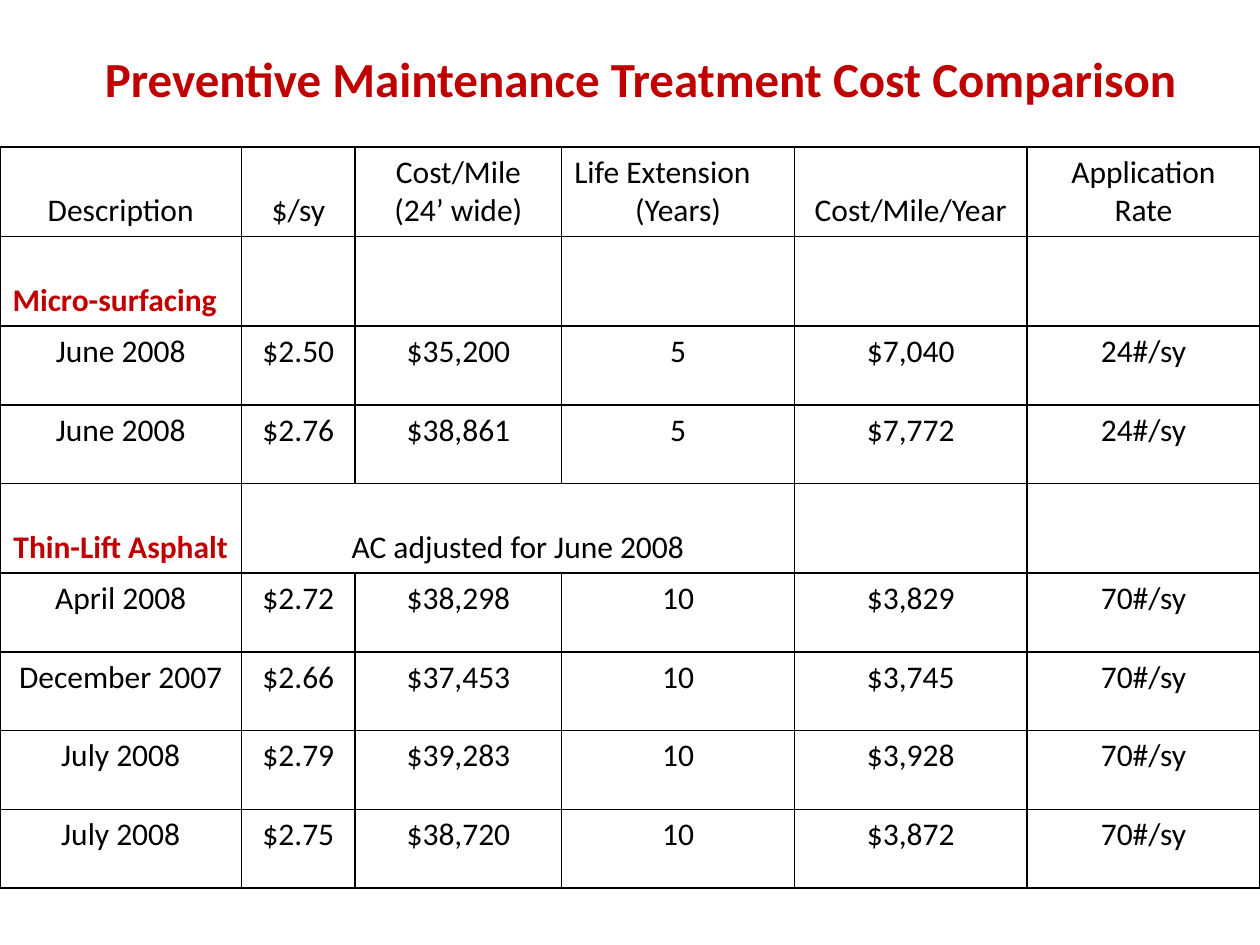
from dataclasses import dataclass

from lxml.etree import SubElement
from pptx import Presentation
from pptx.dml.color import RGBColor
from pptx.enum.text import MSO_ANCHOR, PP_ALIGN
from pptx.oxml.ns import qn
from pptx.slide import Slide
from pptx.table import Table, _Cell
from pptx.util import Pt

RED = RGBColor(0xC0, 0x00, 0x00)
BLACK = RGBColor(0x00, 0x00, 0x00)
FONT = "Calibri"
COLUMN_WIDTHS = (138, 65, 118, 133, 133, 133)
TALL_ROW, DATA_ROW = 51.2, 45
LEFT, CENTER = PP_ALIGN.LEFT, PP_ALIGN.CENTER


@dataclass(frozen=True)
class Row:
    texts: tuple[str, ...]
    tall: bool = False
    section: bool = False
    label_align: PP_ALIGN = CENTER


ROWS = (
    Row(("Description", "$/sy", "Cost/Mile\n(24’ wide)", "Life Extension\n(Years)",
         "Cost/Mile/Year", "Application Rate"), tall=True),
    Row(("Micro-surfacing",), tall=True, section=True, label_align=LEFT),
    Row(("June 2008", "$2.50", "$35,200", "5", "$7,040", "24#/sy")),
    Row(("June 2008", "$2.76", "$38,861", "5", "$7,772", "24#/sy")),
    Row(("Thin-Lift Asphalt", "AC adjusted for June 2008"), tall=True, section=True),
    Row(("April 2008", "$2.72", "$38,298", "10", "$3,829", "70#/sy")),
    Row(("December 2007", "$2.66", "$37,453", "10", "$3,745", "70#/sy")),
    Row(("July 2008", "$2.79", "$39,283", "10", "$3,928", "70#/sy")),
    Row(("July 2008", "$2.75", "$38,720", "10", "$3,872", "70#/sy")),
)
HEADER_ROW, ADJUSTED_ROW = 0, 4
LIFE_COLUMN = 3


def add_title(slide: Slide, wording: str) -> None:
    title = slide.shapes.title
    title.left, title.top, title.width, title.height = Pt(24), Pt(24), Pt(684), Pt(41)
    title.text_frame.text = wording
    title.text_frame.vertical_anchor = MSO_ANCHOR.TOP
    heading = title.text_frame.paragraphs[0]
    heading.alignment = CENTER
    heading.font.name, heading.font.size = FONT, Pt(28)
    heading.font.bold, heading.font.color.rgb = True, RED


def add_borders(cell: _Cell) -> None:
    properties = cell._tc.get_or_add_tcPr()
    for side in ("a:lnL", "a:lnR", "a:lnT", "a:lnB"):
        border = SubElement(properties, qn(side), w=str(Pt(1)))
        fill = SubElement(border, qn("a:solidFill"))
        SubElement(fill, qn("a:srgbClr"), val=str(BLACK))


def format_cell(cell: _Cell, wording: str, row: Row, is_label: bool) -> None:
    add_borders(cell)
    cell.fill.background()
    cell.vertical_anchor = MSO_ANCHOR.BOTTOM if row.tall else MSO_ANCHOR.TOP
    cell.text = wording
    highlighted = row.section and is_label
    for line in cell.text_frame.paragraphs:
        line.alignment = row.label_align if is_label else CENTER
        line.font.name, line.font.size = FONT, Pt(18)
        line.font.bold = highlighted
        line.font.color.rgb = RED if highlighted else BLACK


def add_cost_table(slide: Slide) -> Table:
    heights = [TALL_ROW if row.tall else DATA_ROW for row in ROWS]
    costs = slide.shapes.add_table(
        len(ROWS), len(COLUMN_WIDTHS), Pt(0), Pt(84), Pt(sum(COLUMN_WIDTHS)), Pt(sum(heights))
    ).table
    costs.first_row = costs.horz_banding = False
    for column, width in zip(costs.columns, COLUMN_WIDTHS):
        column.width = Pt(width)
    for row_index, (row, height) in enumerate(zip(ROWS, heights)):
        costs.rows[row_index].height = Pt(height)
        for column_index in range(len(COLUMN_WIDTHS)):
            wording = row.texts[column_index] if column_index < len(row.texts) else ""
            format_cell(costs.cell(row_index, column_index), wording, row, column_index == 0)
    costs.cell(ADJUSTED_ROW, 1).merge(costs.cell(ADJUSTED_ROW, LIFE_COLUMN))
    costs.cell(HEADER_ROW, LIFE_COLUMN).text_frame.paragraphs[0].alignment = LEFT
    return costs


def main() -> None:
    presentation = Presentation()
    presentation.slide_width, presentation.slide_height = Pt(720), Pt(540)
    slide = presentation.slides.add_slide(presentation.slide_layouts[5])
    add_cost_table(slide)
    add_title(slide, "Preventive Maintenance Treatment Cost Comparison")
    presentation.save("out.pptx")


if __name__ == "__main__":
    main()
